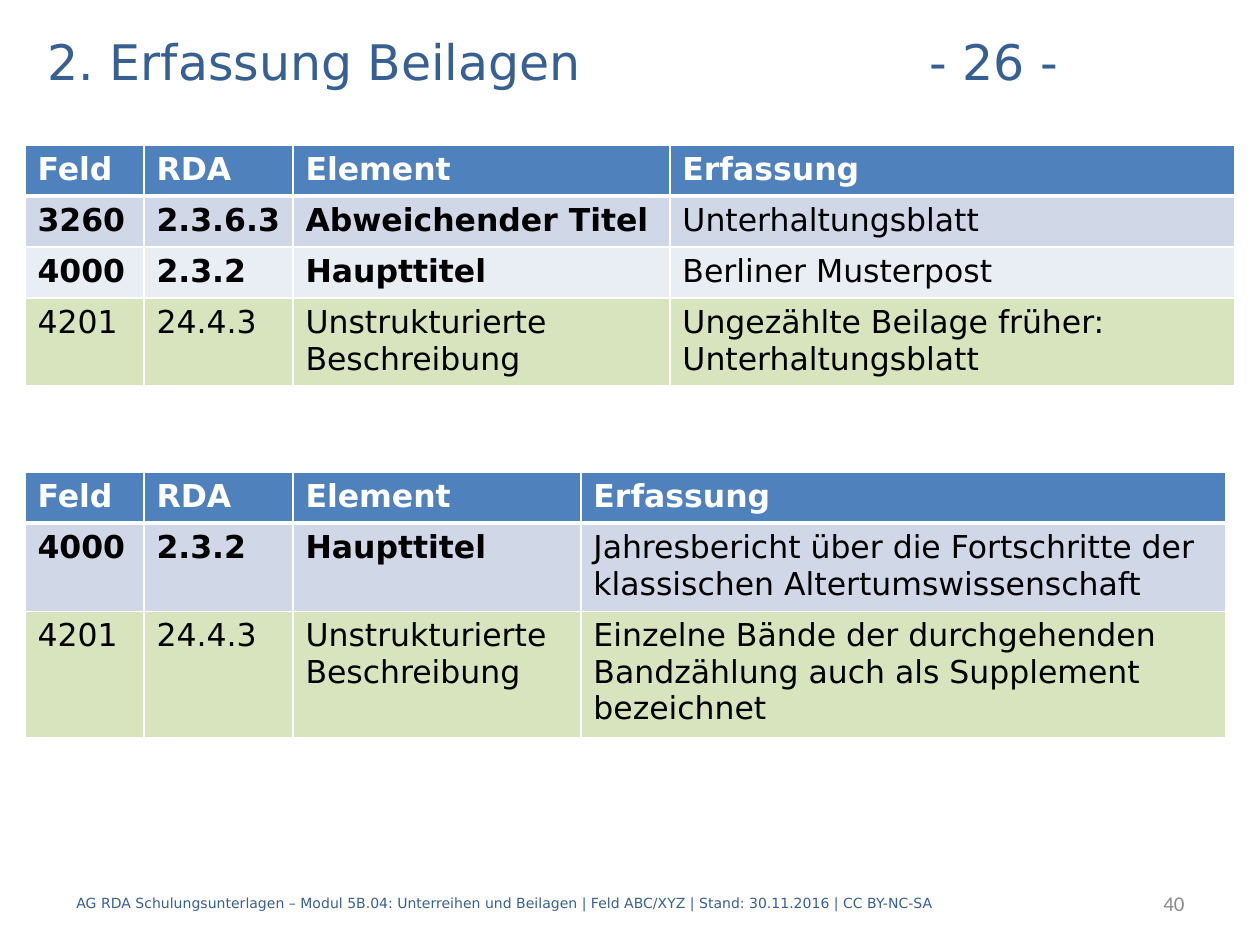
from dataclasses import dataclass

from lxml.etree import SubElement
from pptx import Presentation
from pptx.dml.color import RGBColor
from pptx.enum.text import MSO_ANCHOR as Anchor, MSO_AUTO_SIZE as AutoSize, PP_ALIGN as Align
from pptx.oxml.ns import qn
from pptx.util import Emu, Pt

PX_PER_INCH = 126
BLUE, WHITE, BLACK, GREY = "376092", "FFFFFF", "000000", "8C8C8C"
HEADER_FILL, BAND_FILLS, NOTE_FILL = "4F81BD", ("D0D8E8", "E9EDF4"), "D7E4BD"
HEADINGS = ("Feld", "RDA", "Element", "Erfassung")
NOTE = ("4201", "24.4.3", "Unstrukturierte Beschreibung")
MAIN_TITLE = ("4000", "2.3.2", "Haupttitel")
ROW_HEIGHT = 51


@dataclass(frozen=True)
class Box:
    left: int
    top: int
    width: int
    height: int


@dataclass(frozen=True)
class TextStyle:
    size: int
    color: str
    font: str = "DejaVu Sans"
    bold: bool = False
    align: Align = Align.LEFT


@dataclass(frozen=True)
class FootText:
    text: str
    box: Box
    style: TextStyle


@dataclass(frozen=True)
class RecordTable:
    left: int
    top: int
    columns: tuple[int, ...]
    records: tuple[tuple[str, ...], ...]


TABLES = (
    RecordTable(25, 145, (119, 149, 377, 565), (
        ("3260", "2.3.6.3", "Abweichender Titel", "Unterhaltungsblatt"),
        (*MAIN_TITLE, "Berliner Musterpost"),
        (*NOTE, "Ungezählte Beilage früher: Unterhaltungsblatt"),
    )),
    RecordTable(25, 472, (119, 149, 288, 645), (
        (*MAIN_TITLE, "Jahresbericht über die Fortschritte der klassischen Altertumswissenschaft"),
        (*NOTE, "Einzelne Bände der durchgehenden Bandzählung auch als Supplement bezeichnet"),
    )),
)
FOOT_TEXTS = (
    FootText(
        "AG RDA Schulungsunterlagen – Modul 5B.04: Unterreihen und Beilagen | "
        "Feld ABC/XYZ | Stand: 30.11.2016 | CC BY-NC-SA",
        Box(64, 878, 1071, 50), TextStyle(8, BLUE)),
    FootText("40", Box(997, 878, 200, 50), TextStyle(12, GREY, "Calibri", align=Align.RIGHT)),
)


def px(length: int) -> Emu:
    """Turn pixels into EMU."""
    return Emu(round(length * 914400 / PX_PER_INCH))


def rgb(color: str) -> RGBColor:
    """Turn a hex string into a colour."""
    return RGBColor.from_string(color)


def write(frame, text: str, style: TextStyle) -> None:
    """Fill a text frame with one formatted paragraph."""
    frame.text = text
    frame.word_wrap = True
    paragraph = frame.paragraphs[0]
    paragraph.alignment = style.align
    font = paragraph.font
    font.name, font.size, font.bold = style.font, Pt(style.size), style.bold
    font.color.rgb = rgb(style.color)


def add_title(slide, text: str, box: Box, style: TextStyle) -> None:
    """Move and format the title placeholder, with tab stops in whole inches."""
    title = slide.shapes.title
    title.left, title.top = px(box.left), px(box.top)
    title.width, title.height = px(box.width), px(box.height)
    frame = title.text_frame
    write(frame, text, style)
    frame.auto_size = AutoSize.NONE
    frame.vertical_anchor = Anchor.MIDDLE
    stops = SubElement(frame.paragraphs[0]._p.get_or_add_pPr(), qn("a:tabLst"))
    for inch in (5, 6, 7):
        SubElement(stops, qn("a:tab"), pos=str(px(inch * PX_PER_INCH)), algn="l")


def add_foot_text(slide, foot: FootText) -> None:
    """Add a text box at the foot of the slide."""
    box = foot.box
    shape = slide.shapes.add_textbox(px(box.left), px(box.top), px(box.width), px(box.height))
    write(shape.text_frame, foot.text, foot.style)
    shape.text_frame.vertical_anchor = Anchor.MIDDLE


def format_cell(cell, text: str, style: TextStyle, fill: str, bottom: int) -> None:
    """Write a cell and set its white borders and its fill."""
    write(cell.text_frame, text, style)
    properties = cell._tc.get_or_add_tcPr()
    for side, points in (("L", 1), ("R", 1), ("T", 1), ("B", bottom)):
        line = SubElement(properties, qn(f"a:ln{side}"), w=str(Pt(points)))
        SubElement(SubElement(line, qn("a:solidFill")), qn("a:srgbClr"), val=WHITE)
    cell.fill.solid()
    cell.fill.fore_color.rgb = rgb(fill)


def add_record_table(slide, spec: RecordTable) -> None:
    """Add a table with a header, banded records and a highlighted last row."""
    row_count = len(spec.records) + 1
    table = slide.shapes.add_table(
        row_count, len(spec.columns), px(spec.left), px(spec.top),
        px(sum(spec.columns)), px(ROW_HEIGHT * row_count)).table
    for column, width in zip(table.columns, spec.columns):
        column.width = px(width)
    for index, heading in enumerate(HEADINGS):
        format_cell(table.cell(0, index), heading, TextStyle(18, WHITE, bold=True), HEADER_FILL, 3)
    for row, record in enumerate(spec.records, start=1):
        is_note = row == len(spec.records)
        fill = NOTE_FILL if is_note else BAND_FILLS[(row - 1) % 2]
        for index, text in enumerate(record):
            bold = not is_note and index < len(record) - 1
            format_cell(table.cell(row, index), text, TextStyle(18, BLACK, bold=bold), fill, 1)


def main() -> None:
    """Build and save the slide."""
    presentation = Presentation()
    presentation.slide_width, presentation.slide_height = px(1260), px(945)
    slide = presentation.slides.add_slide(presentation.slide_layouts[5])
    add_title(slide, "2. Erfassung Beilagen\t\t\t- 26 -", Box(35, 25, 1191, 71), TextStyle(28, BLUE))
    for foot in FOOT_TEXTS:
        add_foot_text(slide, foot)
    for table in TABLES:
        add_record_table(slide, table)
    presentation.save("out.pptx")


if __name__ == "__main__":
    main()
